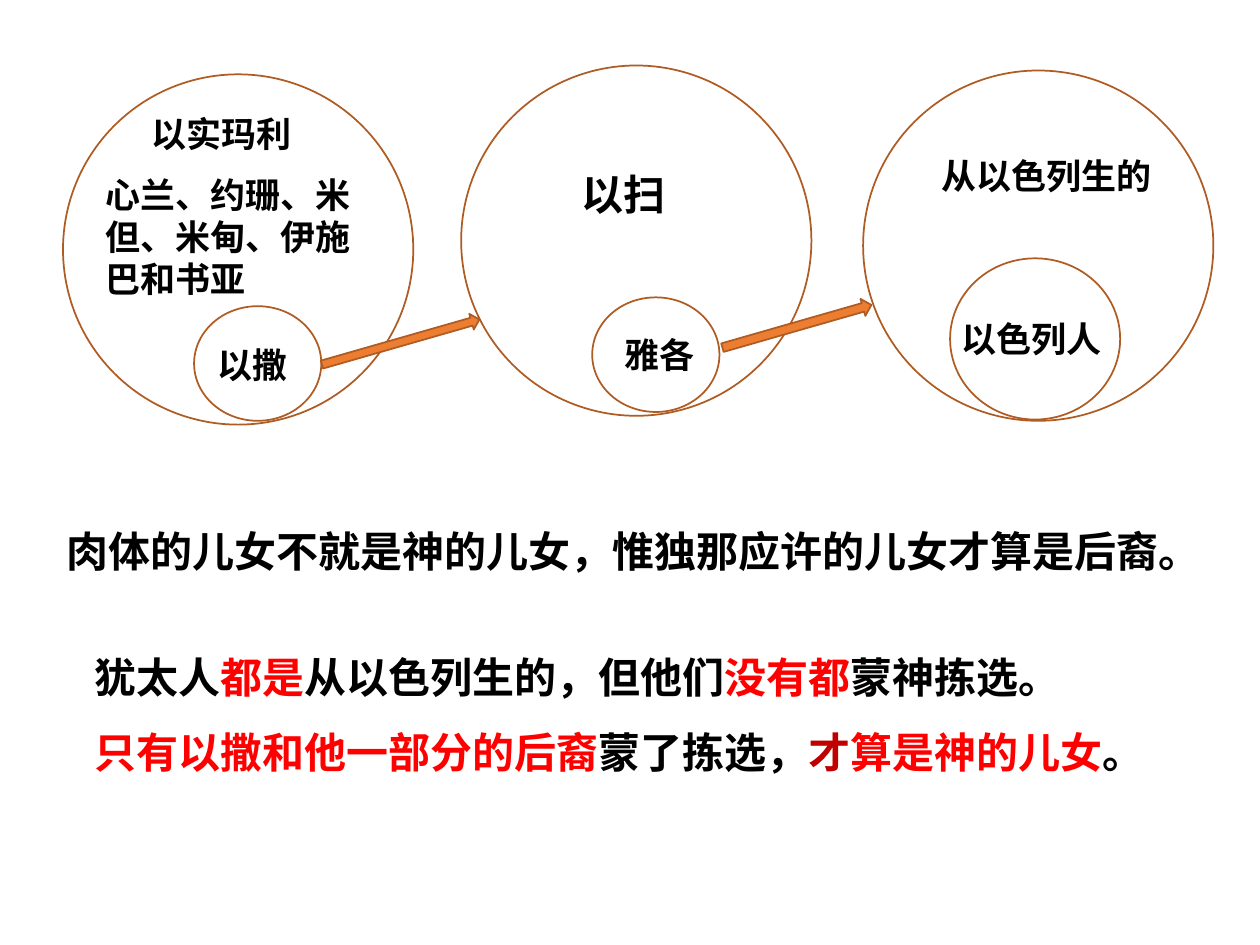
from typing import NamedTuple

from pptx import Presentation
from pptx.dml.color import RGBColor
from pptx.enum.shapes import MSO_SHAPE
from pptx.enum.text import MSO_AUTO_SIZE
from pptx.util import Inches, Pt

BLACK = RGBColor(0x00, 0x00, 0x00)
RED = RGBColor(0xFF, 0x00, 0x00)
DARK_RED = RGBColor(0xC0, 0x00, 0x00)
ORANGE = RGBColor(0xED, 0x7D, 0x31)
BROWN = RGBColor(0xAF, 0x5C, 0x24)
OUTER_SIZE = 2.78


class Box(NamedTuple):
    left: float
    top: float
    width: float
    height: float


class Label(NamedTuple):
    text: str
    box: Box
    size: int = 20
    wrap: bool = True


class Generation(NamedTuple):
    left: float
    top: float
    inner: Box
    labels: list[Label]


class Arrow(NamedTuple):
    box: Box
    rotation: float = 344


GENERATIONS = [
    Generation(0.5, 0.59, Box(1.54, 2.43, 1.01, 0.91), [
        Label("以撒", Box(1.63, 2.68, 0.76, 0.44), wrap=False),
        Label("以实玛利", Box(1.1, 0.84, 1.32, 0.44), wrap=False),
        Label("心兰、约珊、米但、米甸、伊施巴和书亚", Box(0.74, 1.33, 2.36, 1.11)),
    ]),
    Generation(3.66, 0.52, Box(4.7, 2.36, 1.01, 0.91), [
        Label("以扫", Box(4.52, 1.29, 0.87, 0.5), size=24, wrap=False),
        Label("雅各", Box(4.86, 2.6, 0.76, 0.44), wrap=False),
    ]),
    Generation(6.85, 0.56, Box(7.54, 2.05, 1.35, 1.28), [
        Label("从以色列生的", Box(7.37, 1.18, 1.88, 0.44)),
        Label("以色列人", Box(7.53, 2.47, 1.41, 0.44)),
    ]),
]

ARROWS = [Arrow(Box(2.53, 2.65, 1.3, 0.13)), Arrow(Box(5.71, 2.52, 1.23, 0.14))]

PROMISE = "肉体的儿女不就是神的儿女，惟独那应许的儿女才算是后裔。"

CONCLUSION = [
    [("犹太人", BLACK), ("都是", RED), ("从以色列生的，但他们", BLACK),
     ("没有都", RED), ("蒙神拣选。", BLACK)],
    [("只有以撒和他一部分的后裔", RED), ("蒙了拣选，", BLACK), ("才", DARK_RED),
     ("算是神的儿女", RED), ("。", BLACK)],
]


def add_text(s, paragraphs: list, box: Box, *, size: int = 24, font: str = "Calibri",
             wrap: bool = True, spacing: float | None = None) -> None:
    tf = s.shapes.add_textbox(*map(Inches, box)).text_frame
    tf.word_wrap = wrap
    tf.auto_size = MSO_AUTO_SIZE.SHAPE_TO_FIT_TEXT
    for i, runs in enumerate(paragraphs):
        p = tf.add_paragraph() if i else tf.paragraphs[0]
        if spacing:
            p.line_spacing = spacing
        for text, color in runs:
            r = p.add_run()
            r.text = text
            r.font.name = font
            r.font.size = Pt(size)
            r.font.bold = True
            r.font.color.rgb = color


def add_outlined(s, kind: MSO_SHAPE, box: Box, fill: RGBColor | None = None,
                 rotation: float = 0) -> None:
    sp = s.shapes.add_shape(kind, *map(Inches, box))
    sp.shadow.inherit = False
    sp.rotation = rotation
    sp.line.color.rgb = BROWN
    sp.line.width = Pt(1)
    if fill is None:
        sp.fill.background()
    else:
        sp.fill.solid()
        sp.fill.fore_color.rgb = fill


def add_generation(s, generation: Generation) -> None:
    outer = Box(generation.left, generation.top, OUTER_SIZE, OUTER_SIZE)
    for box in (outer, generation.inner):
        add_outlined(s, MSO_SHAPE.OVAL, box)
    for label in generation.labels:
        add_text(s, [[(label.text, BLACK)]], label.box, size=label.size, wrap=label.wrap)


def main() -> None:
    prs = Presentation()
    prs.slide_width = Inches(10)
    prs.slide_height = Inches(7.5)
    s = prs.slides.add_slide(prs.slide_layouts[6])
    for generation in GENERATIONS:
        add_generation(s, generation)
    for arrow in ARROWS:
        add_outlined(s, MSO_SHAPE.RIGHT_ARROW, arrow.box, ORANGE, arrow.rotation)
    add_text(s, CONCLUSION, Box(0.65, 4.92, 8.74, 1.31), spacing=1.5)
    add_text(s, [[(PROMISE, BLACK)]], Box(0.43, 4.12, 9.07, 0.5), font="Noto Sans CJK SC")
    prs.save("out.pptx")


if __name__ == "__main__":
    main()
